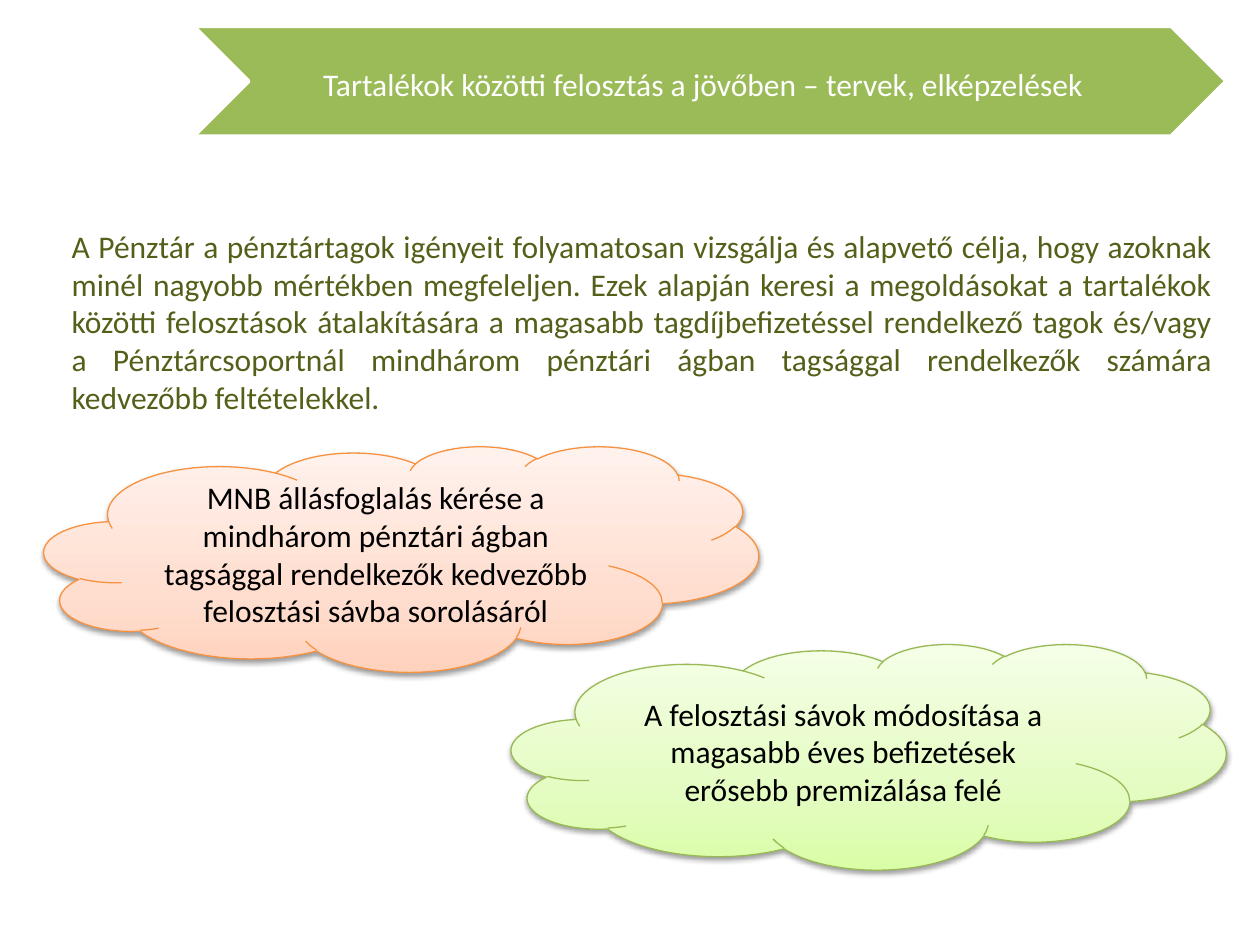
from lxml.etree import SubElement
from pptx import Presentation
from pptx.dml.color import RGBColor
from pptx.enum.shapes import MSO_SHAPE
from pptx.enum.text import MSO_ANCHOR, PP_ALIGN
from pptx.oxml.ns import qn
from pptx.util import Inches, Pt

COLORS = {
    "white": "FFFFFF",
    "black": "000000",
    "green": "9BBB59",
    "olive": "555F19",
    "orange line": "F69240",
    "lime line": "98B955",
}
ORANGE = {0: "FFD2BD", 35: "FFDED0", 100: "FFF2ED"}
LIME = {0: "DAFDA7", 35: "E4FCC2", 100: "F5FFE7"}


def color(name):
    return RGBColor.from_string(COLORS[name])


def write(shape, text, ink="black", align=PP_ALIGN.CENTER,
          anchor=MSO_ANCHOR.MIDDLE, size=18):
    frame = shape.text_frame
    frame.word_wrap = True
    frame.vertical_anchor = anchor
    frame.text = text
    para = frame.paragraphs[0]
    para.alignment = align
    para.font.name = "Calibri"
    para.font.size = Pt(size)
    para.font.color.rgb = color(ink)


deck = Presentation()
deck.slide_width, deck.slide_height = Inches(10), Inches(7.5)
slide = deck.slides.add_slide(deck.slide_layouts[5])
shapes = slide.shapes

arrow = shapes.add_shape(MSO_SHAPE.CHEVRON, Inches(1.54), Inches(0.21),
                         Inches(8.19), Inches(0.87))
arrow.adjustments[0] = 0.5
arrow.shadow.inherit = False
arrow.fill.solid()
arrow.fill.fore_color.rgb = color("green")
arrow.line.color.rgb = color("white")
arrow.line.width = Pt(2)

title = shapes.title
title.left, title.top = Inches(1.94), Inches(0.23)
title.width, title.height = Inches(7.28), Inches(0.87)
write(title, "Tartalékok közötti felosztás a jövőben – tervek, elképzelések",
      ink="white")
arrow._element.addnext(title._element)

body = shapes.add_textbox(Inches(0.47), Inches(1.75), Inches(9.25), Inches(1.92))
write(body, "A Pénztár a pénztártagok igényeit folyamatosan vizsgálja és alapvető "
      "célja, hogy azoknak minél nagyobb mértékben megfeleljen. Ezek alapján keresi "
      "a megoldásokat a tartalékok közötti felosztások átalakítására a magasabb "
      "tagdíjbefizetéssel rendelkező tagok és/vagy a Pénztárcsoportnál mindhárom "
      "pénztári ágban tagsággal rendelkezők számára kedvezőbb feltételekkel.",
      ink="olive", align=PP_ALIGN.JUSTIFY, anchor=MSO_ANCHOR.TOP)

clouds = [
    (0.35, 3.54, ORANGE, "orange line",
     "MNB állásfoglalás kérése a mindhárom pénztári ágban tagsággal rendelkezők "
     "kedvezőbb felosztási sávba sorolásáról"),
    (4.06, 5.11, LIME, "lime line",
     "A felosztási sávok módosítása a magasabb éves befizetések erősebb "
     "premizálása felé"),
]
for left, top, stops, edge, text in clouds:
    cloud = shapes.add_shape(MSO_SHAPE.CLOUD, Inches(left), Inches(top),
                             Inches(5.67), Inches(1.79))
    cloud.fill.gradient()
    cloud.fill.gradient_angle = 90
    props = cloud._element.spPr
    ramp = props.find(".//" + qn("a:gsLst"))
    ramp.clear()
    for pos, shade in stops.items():
        stop = SubElement(ramp, qn("a:gs"), pos=str(pos * 1000))
        SubElement(stop, qn("a:srgbClr"), val=shade)
    cloud.line.color.rgb = color(edge)
    cloud.line.width = Pt(0.75)
    cloud.shadow.inherit = False
    glow = SubElement(props.find(qn("a:effectLst")), qn("a:outerShdw"),
                      blurRad=str(Pt(3.1)), dist=str(Pt(1.6)),
                      dir="5400000", rotWithShape="0")
    tint = SubElement(glow, qn("a:srgbClr"), val=COLORS["black"])
    SubElement(tint, qn("a:alpha"), val="38000")
    write(cloud, text)

deck.save("out.pptx")
